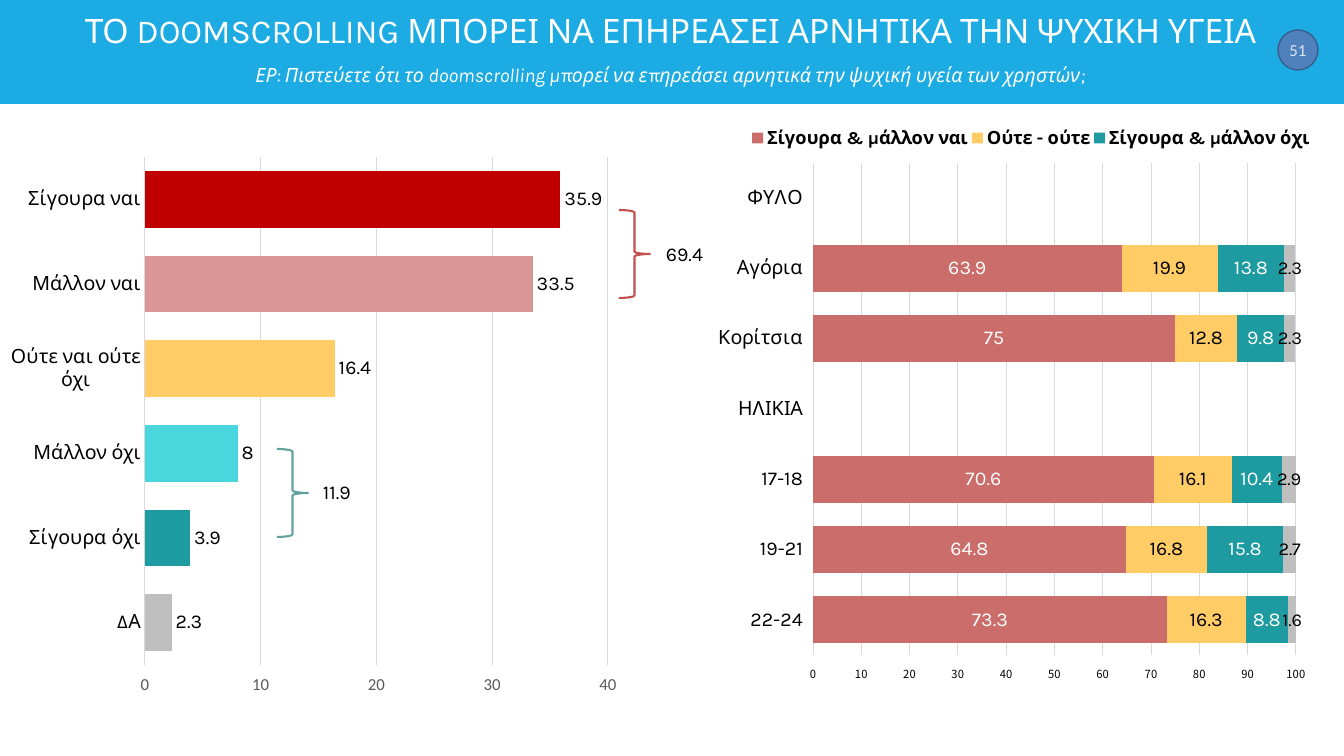
from pptx import Presentation
from pptx.chart.data import CategoryChartData
from pptx.dml.color import RGBColor
from pptx.enum.chart import (XL_CHART_TYPE as ChartType, XL_LABEL_POSITION as LabelPos,
                             XL_LEGEND_POSITION as LegendPos,
                             XL_TICK_LABEL_POSITION as TickLabels, XL_TICK_MARK as Tick)
from pptx.enum.shapes import MSO_SHAPE as Shape
from pptx.enum.text import MSO_ANCHOR as Anchor, PP_ALIGN as Align
from pptx.oxml import parse_xml
from pptx.oxml.ns import nsdecls, qn
from pptx.util import Pt

PX = 914400 / 100.8
KARLA, CALIBRI, NOTO = "Karla", "Calibri", "Noto Sans CJK TC"
COLORS = {
    "banner": "1CABE2", "badge": "4F81BD", "badge line": "385D8A", "badge text": "DCE6F2",
    "white": "FFFFFF", "black": "000000", "axis text": "595959", "grid": "D9D9D9",
    "dark red": "C00000", "pink": "D99694", "red": "CB6D6B", "yellow": "FFCC66",
    "aqua": "49D6DD", "teal": "1D9BA1", "grey": "BFBFBF",
    "red brace": "C0504D", "teal brace": "62A39F",
}

ANSWERS = [("Σίγουρα ναι", 35.9, "dark red"), ("Μάλλον ναι", 33.5, "pink"),
           ("Ούτε ναι ούτε όχι", 16.4, "yellow"), ("Μάλλον όχι", 8, "aqua"),
           ("Σίγουρα όχι", 3.9, "teal"), ("ΔΑ", 2.3, "grey")]
GROUPS = ["ΦΥΛΟ", "Αγόρια", "Κορίτσια", "ΗΛΙΚΙΑ", "17-18", "19-21", "22-24"]
# Name, values by group, fill, label colour, label size
GROUP_SERIES = [
    ("Σίγουρα & μάλλον ναι", [None, 63.9, 75, None, 70.6, 64.8, 73.3], "red", "white", 14),
    ("Ούτε - ούτε", [None, 19.9, 12.8, None, 16.1, 16.8, 16.3], "yellow", "black", 14),
    ("Σίγουρα & μάλλον όχι", [None, 13.8, 9.8, None, 10.4, 15.8, 8.8], "teal", "white", 14),
    ("ΔΑ", [None, 2.3, 2.3, None, 2.9, 2.7, 1.6], "grey", "black", 13),
]


def emu(*lengths):
    return [round(length * PX) for length in lengths]


def rgb(name):
    return RGBColor.from_string(COLORS[name])


def set_font(font, size, color, name=KARLA, bold=False, italic=False):
    font.size, font.name, font.bold, font.italic = Pt(size), name, bold, italic
    font.color.rgb = rgb(color)


def paint(target, color):
    target.fill.solid()
    target.fill.fore_color.rgb = rgb(color)


def add_shape(page, kind, box, fill=None, line=None, width=1):
    shape = page.shapes.add_shape(kind, *emu(*box))
    shape.shadow.inherit = False
    if fill:
        paint(shape, fill)
    else:
        shape.fill.background()
    if line:
        shape.line.color.rgb = rgb(line)
        shape.line.width = Pt(width)
    else:
        shape.line.fill.background()
    return shape


def add_run(para, text, size, color, name=KARLA, italic=False):
    span = para.add_run()
    span.text = text
    set_font(span.font, size, color, name, italic=italic)


def add_heading(page, box, title, question):
    frame = page.shapes.add_textbox(*emu(*box)).text_frame
    frame.word_wrap = True
    frame.vertical_anchor = Anchor.MIDDLE
    first, second = frame.paragraphs[0], frame.add_paragraph()
    for para in (first, second):
        para.alignment = Align.CENTER
        para.line_spacing = 0.9
    second.space_before = Pt(11)
    add_run(first, title, 24, "white")
    add_run(second, "ΕΡ: ", 14, "white", italic=True)
    add_run(second, question, 14, "white", italic=True)


def add_badge(page, box, number):
    frame = add_shape(page, Shape.OVAL, box, "badge", "badge line").text_frame
    frame.margin_left = frame.margin_right = frame.margin_top = frame.margin_bottom = 0
    frame.vertical_anchor = Anchor.MIDDLE
    frame.word_wrap = False
    frame.paragraphs[0].alignment = Align.CENTER
    add_run(frame.paragraphs[0], number, 12, "badge text", CALIBRI)


def add_total(page, brace_box, text_box, total, color):
    add_shape(page, Shape.RIGHT_BRACE, brace_box, line=color, width=1.5)
    frame = page.shapes.add_textbox(*emu(*text_box)).text_frame
    frame.word_wrap = True
    add_run(frame.paragraphs[0], total, 14, "black")


def make_layout(chart_box, part_box, target=""):
    left, top, width, height = chart_box
    x, y, w, h = part_box
    shares = {"x": (x - left) / width, "y": (y - top) / height, "w": w / width, "h": h / height}
    modes = '<c:xMode val="edge"/><c:yMode val="edge"/>'
    values = "".join(f'<c:{key} val="{share:.4f}"/>' for key, share in shares.items())
    return parse_xml(f'<c:layout {nsdecls("c")}><c:manualLayout>{target}{modes}{values}'
                     '</c:manualLayout></c:layout>')


def set_layout(part, layout, index):
    for old in part.findall(qn("c:layout")):
        part.remove(old)
    part.insert(index, layout)


def add_bars(page, kind, box, plot_box, categories, series, gap, top, value_font):
    data = CategoryChartData()
    data.categories = categories
    for name, values in series:
        data.add_series(name, values)
    chart = page.shapes.add_chart(kind, *emu(*box), data).chart
    chart.has_title = chart.has_legend = False
    set_font(chart.font, 11, "black", value_font[2])
    plot = chart.plots[0]
    plot.gap_width = gap
    plot.vary_by_categories = False
    inner = '<c:layoutTarget val="inner"/>'
    set_layout(chart.element.find(".//" + qn("c:plotArea")), make_layout(box, plot_box, inner), 0)

    # Categories run downwards, so the high end of the value labels is the bottom
    names, scale = chart.category_axis, chart.value_axis
    names.reverse_order = True
    names.tick_label_position = TickLabels.NEXT_TO_AXIS
    scale.tick_label_position = TickLabels.HIGH
    names.format.line.color.rgb = rgb("grid")
    set_font(names.tick_labels.font, 14, "black")
    scale.minimum_scale, scale.maximum_scale, scale.major_unit = 0, top, 10
    scale.format.line.fill.background()
    grid = scale.major_gridlines.format.line
    grid.color.rgb = rgb("grid")
    names.format.line.width = grid.width = Pt(0.75)
    set_font(scale.tick_labels.font, *value_font)
    for axis in (names, scale):
        axis.major_tick_mark = axis.minor_tick_mark = Tick.NONE
    return chart


def label_series(series, position, size, color):
    labels = series.data_labels
    labels.show_value = True
    labels.position = position
    set_font(labels.font, size, color)


def add_answers_chart(page):
    names, values, fills = zip(*ANSWERS)
    chart = add_bars(page, ChartType.BAR_CLUSTERED, (9, 134, 663, 584), (145, 157, 463, 508),
                     names, [("Series 1", values)], 49, 40, (12, "axis text", CALIBRI))
    series = chart.plots[0].series[0]
    for index, fill in enumerate(fills):
        paint(series.points[index].format, fill)
    label_series(series, LabelPos.OUTSIDE_END, 14, "black")


def add_groups_chart(page):
    box = (661, 106, 663, 620)
    chart = add_bars(page, ChartType.BAR_STACKED, box, (813, 163, 483, 492), GROUPS,
                     [row[:2] for row in GROUP_SERIES], 50, 100, (8, "black", NOTO))
    chart.category_axis.tick_label_position = TickLabels.LOW
    chart.plots[0].overlap = 100
    for series, (_, _, fill, color, size) in zip(chart.plots[0].series, GROUP_SERIES):
        paint(series.format, fill)
        label_series(series, LabelPos.CENTER, size, color)

    # Legend above the bars, without the last series: bar entries count from the end
    chart.has_legend = True
    chart.legend.position = LegendPos.BOTTOM
    chart.legend.include_in_layout = False
    set_font(chart.legend.font, 13, "black", bold=True)
    legend = chart.element.find(".//" + qn("c:legend"))
    set_layout(legend, make_layout(box, (748, 126, 566, 24)), 1)
    legend.insert(1, parse_xml(f'<c:legendEntry {nsdecls("c")}><c:idx val="0"/>'
                               '<c:delete val="1"/></c:legendEntry>'))


def main():
    deck = Presentation()
    deck.slide_width, deck.slide_height = emu(1344, 756)
    page = deck.slides.add_slide(deck.slide_layouts[6])

    # Banner
    add_shape(page, Shape.RECTANGLE, (0, 0, 1344, 104), "banner")
    add_badge(page, (1278, 30, 40, 40), "51")
    add_heading(page, (66, 6, 1209, 89),
                "ΤΟ DOOMSCROLLING ΜΠΟΡΕΙ ΝΑ ΕΠΗΡΕΑΣΕΙ ΑΡΝΗΤΙΚΑ ΤΗΝ ΨΥΧΙΚΗ ΥΓΕΙΑ",
                "Πιστεύετε ότι το doomscrolling μπορεί να επηρεάσει αρνητικά "
                "την ψυχική υγεία των χρηστών;")

    # Charts
    add_groups_chart(page)
    add_answers_chart(page)

    # Totals of the paired answers
    add_total(page, (619, 210, 31, 88), (656, 237, 93, 34), "69.4", "red brace")
    add_total(page, (277, 449, 31, 88), (313, 475, 93, 34), "11.9", "teal brace")

    deck.save("out.pptx")


if __name__ == "__main__":
    main()
